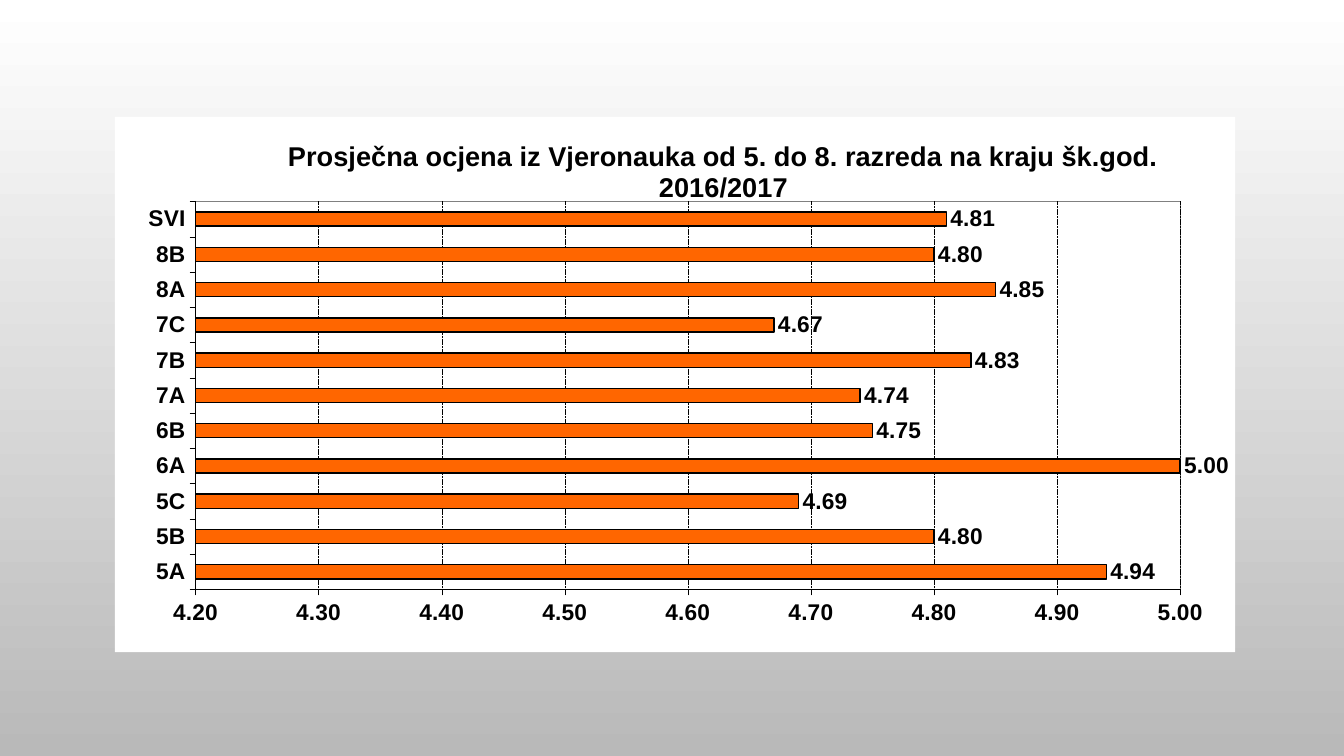
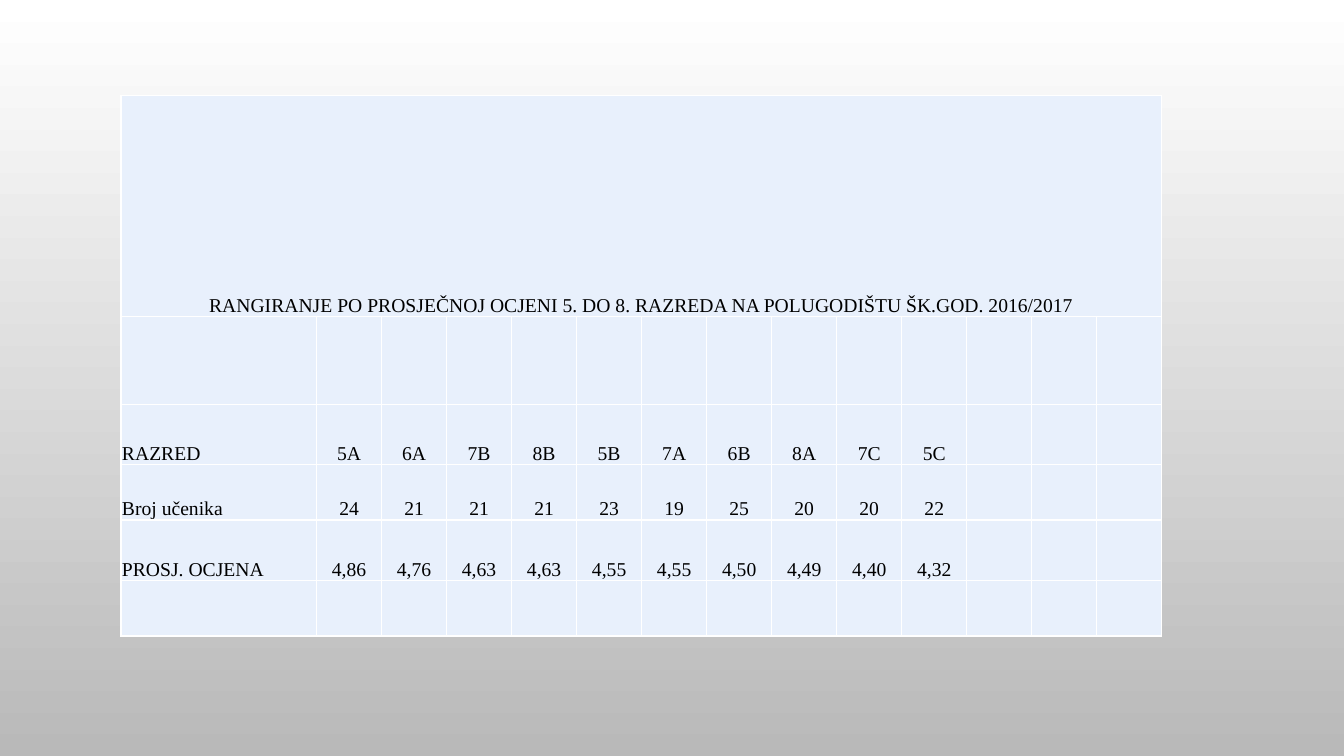
from lxml import etree
from pptx import Presentation
from pptx import util as u
from pptx.chart.data import CategoryChartData
from pptx.dml.color import RGBColor
from pptx.enum import chart as charts, dml, text
from pptx.oxml import parse_xml
from pptx.oxml.ns import nsdecls, qn

WHITE = RGBColor(0xFF, 0xFF, 0xFF)
GREY = RGBColor(0xB9, 0xB9, 0xB9)
BLACK = RGBColor(0, 0, 0)
ORANGE = RGBColor(0xFF, 0x66, 0x00)
PALE_BLUE = RGBColor(0xE8, 0xF0, 0xFC)


def style_font(font, name, size, bold=False):
    font.name, font.size, font.bold = name, u.Pt(size), bold
    font.color.rgb = BLACK


def place(parent, index, **shares):
    """Give a chart part a fixed place, in shares of the chart's size."""
    for automatic in parent.findall(qn("c:layout")):
        parent.remove(automatic)
    layout = parse_xml(f"<c:layout {nsdecls('c')}><c:manualLayout/></c:layout>")
    for tag, value in shares.items():
        etree.SubElement(layout[0], qn(f"c:{tag}")).set("val", str(value))
    parent.insert(index, layout)


prs = Presentation()
prs.slide_width, prs.slide_height = u.Inches(13.33), u.Inches(7.5)
blank = prs.slide_layouts[6]

# Shared background: white fading down to grey
backdrop = prs.slide_master.background.fill
backdrop.gradient()
backdrop.gradient_angle = 270
for stop, color in zip(backdrop.gradient_stops, (WHITE, GREY)):
    stop.color.rgb = color

# Slide 1: average grade per class
grades = {"5A": 4.94, "5B": 4.80, "5C": 4.69, "6A": 5.00, "6B": 4.75, "7A": 4.74,
          "7B": 4.83, "7C": 4.67, "8A": 4.85, "8B": 4.80, "SVI": 4.81}
grade_data = CategoryChartData(number_format="0.00")
grade_data.categories = list(grades)
grade_data.add_series("Series 1", list(grades.values()))
chart = prs.slides.add_slide(blank).shapes.add_chart(
    charts.XL_CHART_TYPE.BAR_CLUSTERED, u.Inches(1.14), u.Inches(1.16),
    u.Inches(11.11), u.Inches(5.31), grade_data).chart
chart.has_legend = False
style_font(chart.font, "Arial", 16.2, True)

# Chart title
chart.has_title = True
heading = chart.chart_title.text_frame
heading.text = "Prosječna ocjena iz Vjeronauka od 5. do 8. razreda na kraju šk.god. 2016/2017"
style_font(heading.paragraphs[0].font, "Arial", 19.4, True)

# Axes and gridlines
classes, scale = chart.category_axis, chart.value_axis
scale.minimum_scale, scale.maximum_scale, scale.major_unit = 4.2, 5, 0.1
scale.tick_labels.number_format = "0.00"
scale.tick_labels.number_format_is_linked = False
scale.has_major_gridlines = True
for axis in (classes, scale):
    axis.major_tick_mark = charts.XL_TICK_MARK.OUTSIDE
    style_font(axis.tick_labels.font, "Arial", 16.2, True)
for line in (classes.format.line, scale.format.line, scale.major_gridlines.format.line):
    line.color.rgb, line.width = BLACK, u.Pt(0.25)
scale.major_gridlines.format.line.dash_style = dml.MSO_LINE.SQUARE_DOT
scale.major_gridlines.format.line.dash_style = dml.MSO_LINE.SQUARE_DOT

# Bars and their values
bars = chart.plots[0]
bars.gap_width, bars.vary_by_categories = 150, False
bar_format = bars.series[0].format
bar_format.fill.solid()
bar_format.fill.fore_color.rgb = ORANGE
bar_format.line.color.rgb, bar_format.line.width = BLACK, u.Pt(1)
bars.has_data_labels = True
values = bars.data_labels
values.show_value = True
values.position = charts.XL_LABEL_POSITION.OUTSIDE_END
values.number_format, values.number_format_is_linked = "0.00", False
style_font(values.font, "Arial", 16.2, True)

# White chart and plot areas, fixed title and plot places
chart_root = chart.element.xpath("c:chart")[0]
plot_area = chart_root.xpath("c:plotArea")[0]
panel = (f"<c:spPr {nsdecls('c', 'a')}><a:solidFill><a:srgbClr val='{WHITE}'/></a:solidFill>"
         "<a:ln{}</a:ln></c:spPr>")
chart_root.addnext(parse_xml(panel.format("><a:noFill/>")))
plot_area.append(parse_xml(panel.format(
    " w='9525'><a:solidFill><a:srgbClr val='808080'/></a:solidFill>")))
place(chart_root.xpath("c:title")[0], 1, xMode="edge", yMode="edge", x=0.15, y=0.03)
place(plot_area, 0, layoutTarget="inner", xMode="edge", yMode="edge",
      x=0.072, y=0.158, w=0.879, h=0.725)

# Slide 2: classes ranked by average grade
ranking = [
    ["RANGIRANJE PO PROSJEČNOJ OCJENI 5. DO 8. RAZREDA NA POLUGODIŠTU ŠK.GOD. 2016/2017"],
    [],
    "RAZRED 5A 6A 7B 8B 5B 7A 6B 8A 7C 5C".split(),
    ["Broj učenika", *"24 21 21 21 23 19 25 20 20 22".split()],
    ["PROSJ. OCJENA", *"4,86 4,76 4,63 4,63 4,55 4,55 4,50 4,49 4,40 4,32".split()],
    [],
]
row_heights = [2.19, 0.87, 0.6, 0.55, 0.6, 0.55]
column_widths = [1.94] + [0.645] * 13
table = prs.slides.add_slide(blank).shapes.add_table(
    len(row_heights), len(column_widths), u.Inches(1.2), u.Inches(0.95),
    u.Inches(sum(column_widths)), u.Inches(sum(row_heights))).table
table.first_row = table.horz_banding = False
for column, width in zip(table.columns, column_widths):
    column.width = u.Inches(width)

for r, (height, words) in enumerate(zip(row_heights, ranking)):
    table.rows[r].height = u.Inches(height)
    for c in range(len(column_widths)):
        cell = table.cell(r, c)
        # White borders come before the fill
        for side in "LRTB":
            cell._tc.get_or_add_tcPr().append(parse_xml(
                f"<a:ln{side} {nsdecls('a')} w='12700'><a:solidFill>"
                f"<a:srgbClr val='{WHITE}'/></a:solidFill></a:ln{side}>"))
        cell.fill.solid()
        cell.fill.fore_color.rgb = PALE_BLUE
        if c < len(words):
            cell.text = words[c]
            cell.vertical_anchor = text.MSO_ANCHOR.BOTTOM
            cell.margin_left = cell.margin_right = cell.margin_top = u.Inches(0.01)
            cell.margin_bottom = 0
            entry = cell.text_frame.paragraphs[0]
            label = c == 0 and r > 0
            entry.alignment = text.PP_ALIGN.LEFT if label else text.PP_ALIGN.CENTER
            style_font(entry.font, "Times New Roman", 14)
table.cell(0, 0).merge(table.cell(0, len(column_widths) - 1))

prs.save("out.pptx")
